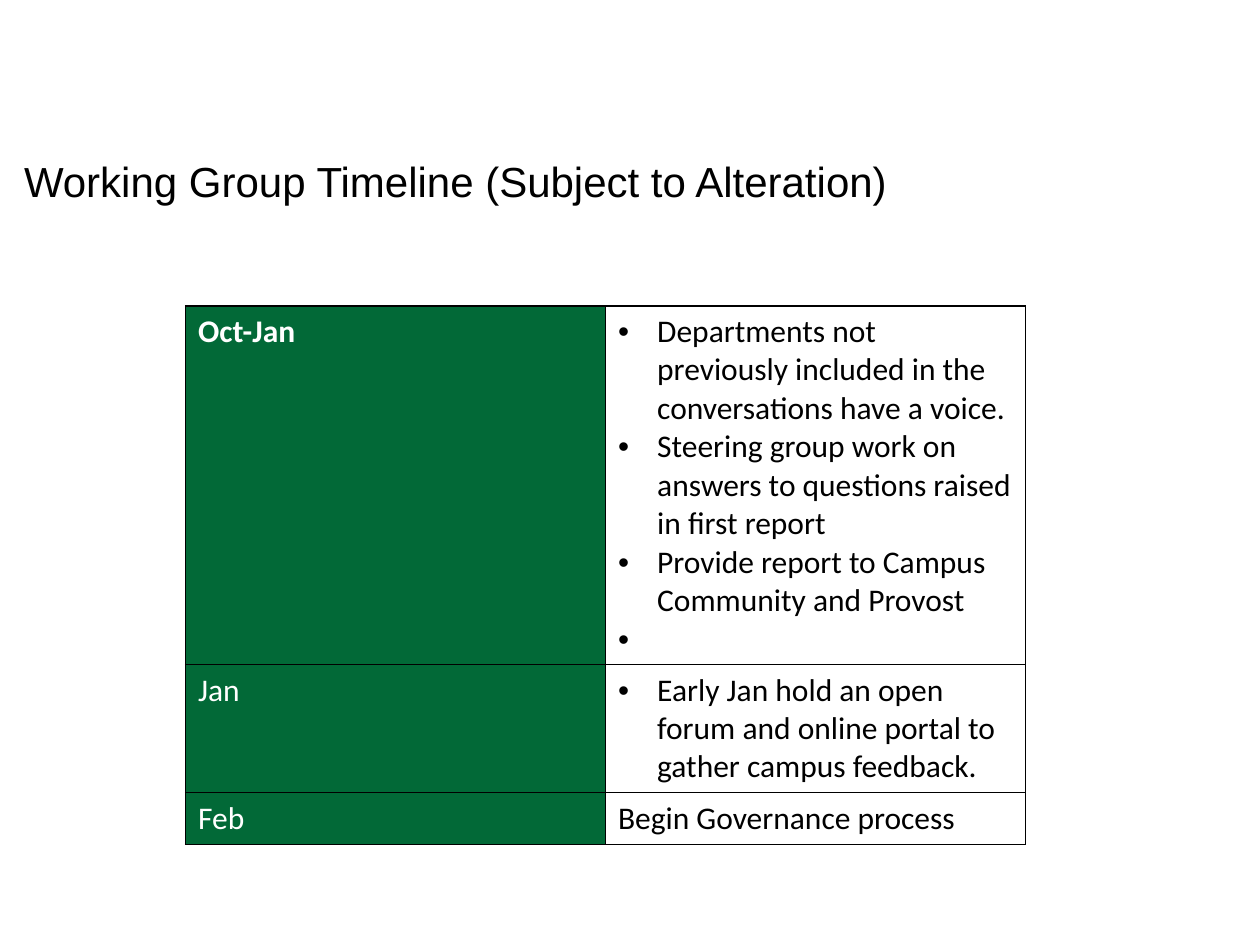
from lxml import etree
from pptx import Presentation
from pptx.dml.color import RGBColor
from pptx.enum.text import MSO_ANCHOR, PP_ALIGN
from pptx.oxml.ns import qn
from pptx.util import Cm, Pt

LEFT, MIDDLE = PP_ALIGN.LEFT, MSO_ANCHOR.MIDDLE
BLACK = RGBColor(0, 0, 0)
WHITE = RGBColor(255, 255, 255)
GREEN = RGBColor(0x02, 0x69, 0x37)
INDENT = Cm(0.79)
TITLE_ONLY = 5

# Period, bold period, activities, bulleted activities, row height in cm
TIMELINE = [
    ("Oct-Jan", True, [
        "Departments not previously included in the conversations have a voice.",
        "Steering group work on answers to questions raised in first report",
        "Provide report to Campus Community and Provost",
        " ",  # open item, shown as a bullet only
    ], True, 7.23),
    ("Jan", False, [
        "Early Jan hold an open forum and online portal to gather campus feedback.",
    ], True, 2.58),
    ("Feb", False, ["Begin Governance process"], False, 1.04),
]


def add_bullet(p):
    pPr = p._p.get_or_add_pPr()
    pPr.set("marL", str(INDENT))
    pPr.set("indent", str(-INDENT))
    etree.SubElement(pPr, qn("a:buFont")).set("typeface", "Arial")
    etree.SubElement(pPr, qn("a:buChar")).set("char", "•")


def write(tf, *lines, font="Calibri", size=18, color=BLACK, bold=False, bullet=False):
    for i, line in enumerate(lines):
        p = tf.paragraphs[0] if i == 0 else tf.add_paragraph()
        p.alignment = LEFT
        if bullet:
            add_bullet(p)
        r = p.add_run()
        r.text = line
        r.font.name, r.font.size, r.font.bold = font, Pt(size), bold
        r.font.color.rgb = color


def set_borders(cell, color=BLACK, width=1):
    tcPr = cell._tc.get_or_add_tcPr()
    for i, side in enumerate(("a:lnL", "a:lnR", "a:lnT", "a:lnB")):
        ln = etree.Element(qn(side), w=str(Pt(width)))
        fill = etree.SubElement(ln, qn("a:solidFill"))
        etree.SubElement(fill, qn("a:srgbClr")).set("val", str(color))
        tcPr.insert(i, ln)  # borders come before the fill


def add_title(s, text, left, top, width, height):
    sp = s.shapes.title
    sp.left, sp.top, sp.width, sp.height = left, top, width, height
    tf = sp.text_frame
    tf.vertical_anchor = MIDDLE
    write(tf, text, font="Arial", size=24)


def add_timeline(s, left, top, width):
    height = Cm(sum(row[-1] for row in TIMELINE))
    table = s.shapes.add_table(len(TIMELINE), 2, left, top, width, height).table
    for row, (period, bold, activities, bullet, row_height) in zip(table.rows, TIMELINE):
        row.height = Cm(row_height)
        when, what = row.cells
        for cell, color in ((when, GREEN), (what, WHITE)):
            cell.fill.solid()
            cell.fill.fore_color.rgb = color
            set_borders(cell)
        write(when.text_frame, period, color=WHITE, bold=bold)
        write(what.text_frame, *activities, bullet=bullet)


def main():
    prs = Presentation()
    prs.slide_width, prs.slide_height = Cm(25.4), Cm(19.05)
    s = prs.slides.add_slide(prs.slide_layouts[TITLE_ONLY])
    add_title(s, "Working Group Timeline (Subject to Alteration)",
              Cm(0.23), Cm(2.06), Cm(22.86), Cm(3.18))
    add_timeline(s, Cm(3.74), Cm(6.17), Cm(16.93))
    prs.save("out.pptx")


if __name__ == "__main__":
    main()
